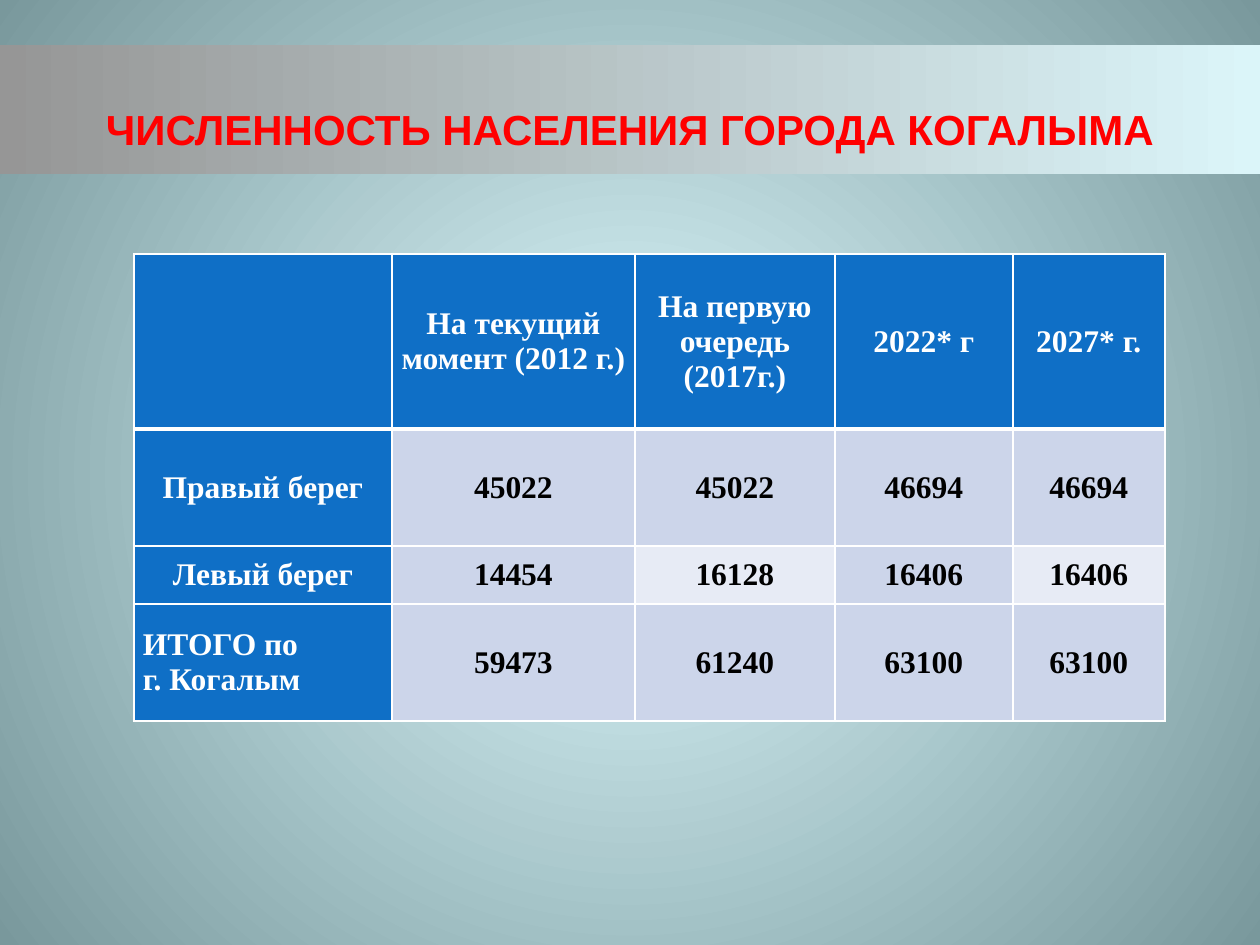
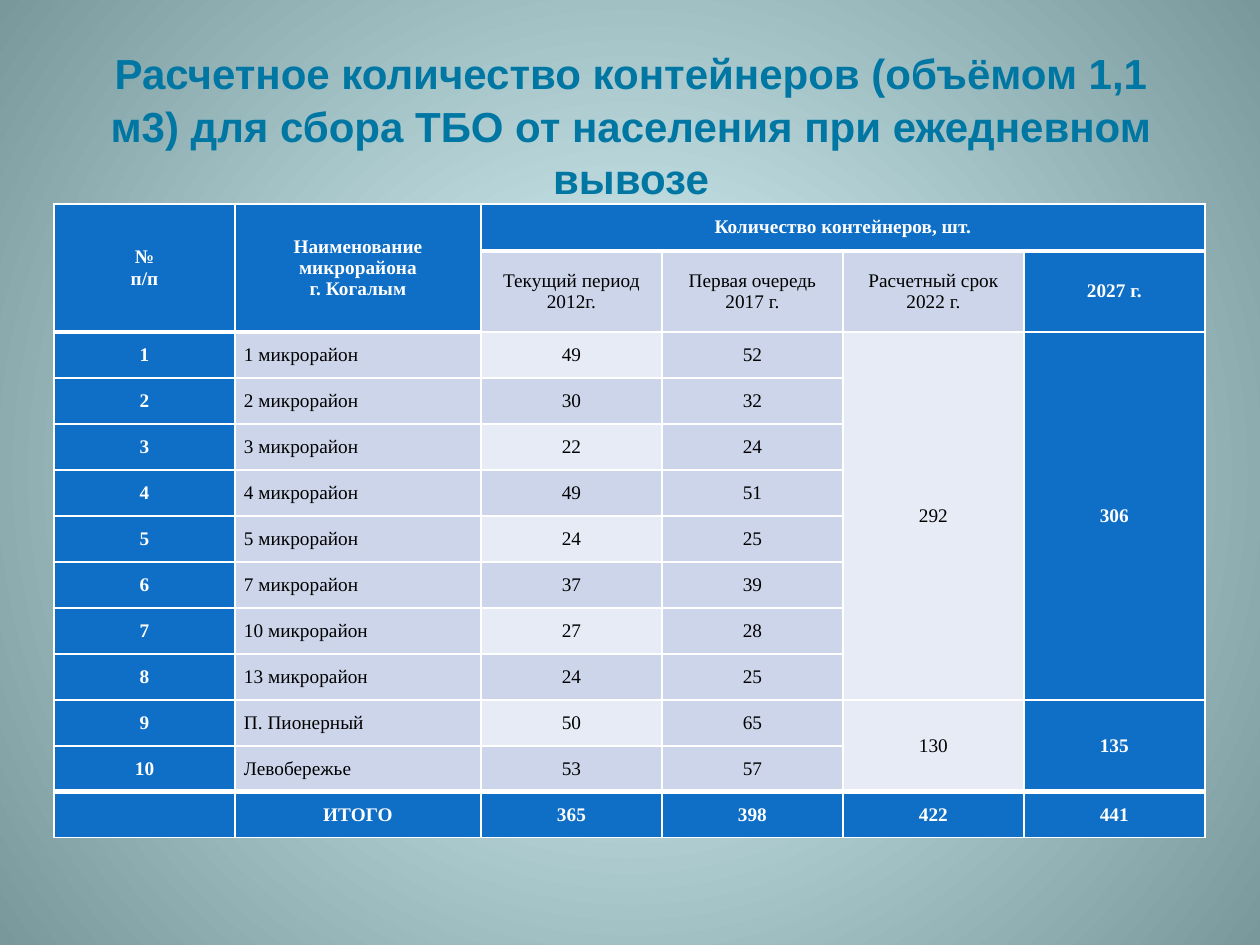
"""Build two slides on the population and waste containers of Kogalym."""
from itertools import product

from lxml.etree import SubElement
from pptx import Presentation
from pptx.dml.color import RGBColor
from pptx.enum.shapes import MSO_SHAPE
from pptx.enum.text import MSO_ANCHOR, PP_ALIGN
from pptx.oxml.ns import qn
from pptx.util import Emu, Pt

PX = 914400 / 126
WHITE = RGBColor(0xFF, 0xFF, 0xFF)
BLACK = RGBColor(0x00, 0x00, 0x00)
BLUE = RGBColor(0x0F, 0x6F, 0xC6)
BAND = RGBColor(0xCC, 0xD5, 0xEA)
LIGHT = RGBColor(0xE7, 0xEB, 0xF5)
RED = RGBColor(0xFF, 0x00, 0x00)
TEAL = RGBColor(0x00, 0x76, 0xA3)
GLOW = RGBColor(0xDE, 0xFB, 0xFF)
EDGE = RGBColor(0x79, 0x98, 0x9C)
GREY = RGBColor(0x96, 0x96, 0x96)
ICE = RGBColor(0xDB, 0xF5, 0xF9)


def px(value):
    return Emu(round(value * PX))


def add_grid(slide, left, top, widths, heights, rows, size, bold,
             blue, light, left_aligned, thick, merges=()):
    frame = slide.shapes.add_table(len(rows), len(widths), px(left), px(top),
                                   px(sum(widths)), px(sum(heights)))
    table = frame.table
    table.first_row = table.horz_banding = False
    for column, width in zip(table.columns, widths):
        column.width = px(width)
    for row, height in zip(table.rows, heights):
        row.height = px(height)
    for first, last in merges:
        table.cell(*first).merge(table.cell(*last))
    for r, c in product(range(len(rows)), range(len(widths))):
        cell = table.cell(r, c)
        cell.margin_left = cell.margin_right = px(9)
        cell.margin_top = cell.margin_bottom = 0
        cell.vertical_anchor = MSO_ANCHOR.MIDDLE
        properties = cell._tc.get_or_add_tcPr()
        for side, heavy in (("L", False), ("R", False),
                            ("T", (r - 1, c) in thick), ("B", (r, c) in thick)):
            line = SubElement(properties, qn(f"a:ln{side}"), w=str(Pt(3 if heavy else 1)))
            paint = SubElement(line, qn("a:solidFill"))
            SubElement(paint, qn("a:srgbClr"), val=str(WHITE))
        is_blue = (r, c) in blue
        cell.fill.solid()
        cell.fill.fore_color.rgb = BLUE if is_blue else LIGHT if (r, c) in light else BAND
        cell.text_frame.text = rows[r][c]
        for paragraph in cell.text_frame.paragraphs:
            paragraph.alignment = PP_ALIGN.LEFT if (r, c) in left_aligned else PP_ALIGN.CENTER
            paragraph.font.name = "Times New Roman"
            paragraph.font.size = Pt(size)
            paragraph.font.bold = bold or is_blue
            paragraph.font.color.rgb = WHITE if is_blue else BLACK


presentation = Presentation()
presentation.slide_width = px(1260)
presentation.slide_height = px(945)
blank = presentation.slide_layouts[6]

master = presentation.slide_master
backdrop = master.background.fill
backdrop.gradient()
for stop, color in zip(backdrop.gradient_stops, (GLOW, EDGE)):
    stop.color.rgb = color
gradient = master.element.find(".//" + qn("p:bg")).find(".//" + qn("a:gradFill"))
linear = gradient.find(qn("a:lin"))
circle = SubElement(gradient, qn("a:path"), path="circle")
SubElement(circle, qn("a:fillToRect"), l="50000", t="50000", r="50000", b="50000")
gradient.replace(linear, circle)

population_slide = presentation.slides.add_slide(blank)
container_slide = presentation.slides.add_slide(blank)

population_rows = [
    ["", "На текущий момент (2012 г.)", "На первую очередь (2017г.)", "2022* г", "2027* г."],
    ["Правый берег", "45022", "45022", "46694", "46694"],
    ["Левый берег", "14454", "16128", "16406", "16406"],
    ["ИТОГО по\nг. Когалым", "59473", "61240", "63100", "63100"],
]
add_grid(
    population_slide, 134, 254, [258, 243, 200, 178, 152], [175, 117, 58, 117],
    population_rows, size=18, bold=True,
    blue={(r, c) for r, c in product(range(4), range(5)) if r == 0 or c == 0},
    light={(2, 2), (2, 4)},
    left_aligned={(3, 0)},
    thick={(0, c) for c in range(5)},
)

title_band = population_slide.shapes.add_shape(
    MSO_SHAPE.RECTANGLE, 0, px(45), px(1260), px(129))
title_band.shadow.inherit = False
title_band.line.fill.background()
title_band.fill.gradient()
title_band.fill.gradient_angle = 0
for stop, color in zip(title_band.fill.gradient_stops, (GREY, ICE)):
    stop.color.rgb = color
title_band.text_frame.margin_bottom = px(20)

container_title = container_slide.shapes.add_textbox(px(64), px(45), px(1134), px(158))

for shape, text, color, anchor, spacing in (
    (title_band, "ЧИСЛЕННОСТЬ НАСЕЛЕНИЯ ГОРОДА КОГАЛЫМА", RED, MSO_ANCHOR.BOTTOM, 1.0),
    (container_title, "Расчетное количество контейнеров (объёмом 1,1 м3) для сбора ТБО "
     "от населения при ежедневном вывозе", TEAL, MSO_ANCHOR.MIDDLE, 1.05),
):
    shape.text_frame.word_wrap = True
    shape.text_frame.vertical_anchor = anchor
    shape.text_frame.text = text
    paragraph = shape.text_frame.paragraphs[0]
    paragraph.alignment = PP_ALIGN.CENTER
    paragraph.line_spacing = spacing
    paragraph.font.name = "Arial"
    paragraph.font.size = Pt(24)
    paragraph.font.bold = True
    paragraph.font.color.rgb = color

districts = [
    ("1 микрорайон", 49, 52, "292", "306"),
    ("2 микрорайон", 30, 32, "", ""),
    ("3 микрорайон", 22, 24, "", ""),
    ("4 микрорайон", 49, 51, "", ""),
    ("5 микрорайон", 24, 25, "", ""),
    ("7 микрорайон", 37, 39, "", ""),
    ("10 микрорайон", 27, 28, "", ""),
    ("13 микрорайон", 24, 25, "", ""),
    ("П. Пионерный", 50, 65, "130", "135"),
    ("Левобережье", 53, 57, "", ""),
]
container_rows = [
    ["№\nп/п", "Наименование микрорайона\nг. Когалым", "Количество контейнеров, шт.", "", "", ""],
    ["", "", "Текущий период\n2012г.", "Первая очередь\n2017 г.",
     "Расчетный срок\n2022 г.", "2027 г."],
]
for number, (name, current, first_stage, target, final) in enumerate(districts, 1):
    container_rows.append([str(number), name, str(current), str(first_stage), target, final])
container_rows.append(["", "ИТОГО", "365", "398", "422", "441"])

container_cells = set(product(range(13), range(6)))
add_grid(
    container_slide, 54, 204, [181, 246] + [181] * 4, [47, 81] + [46] * 11,
    container_rows, size=11, bold=False,
    blue={(r, c) for r, c in container_cells if r in (0, 12) or c in (0, 5)} | {(1, 1)},
    light={(r, c) for r, c in container_cells if r > 1 and (c == 4 or c == 2 and r % 2 == 0)},
    left_aligned={(r, 1) for r in range(2, 12)},
    thick={(r, c) for r, c in container_cells if r in (0, 11)} | {(1, 0), (1, 1)},
    merges=[((0, 0), (1, 0)), ((0, 1), (1, 1)), ((0, 2), (0, 5))]
    + [((first, c), (last, c)) for first, last in ((2, 9), (10, 11)) for c in (4, 5)],
)

presentation.save("out.pptx")
